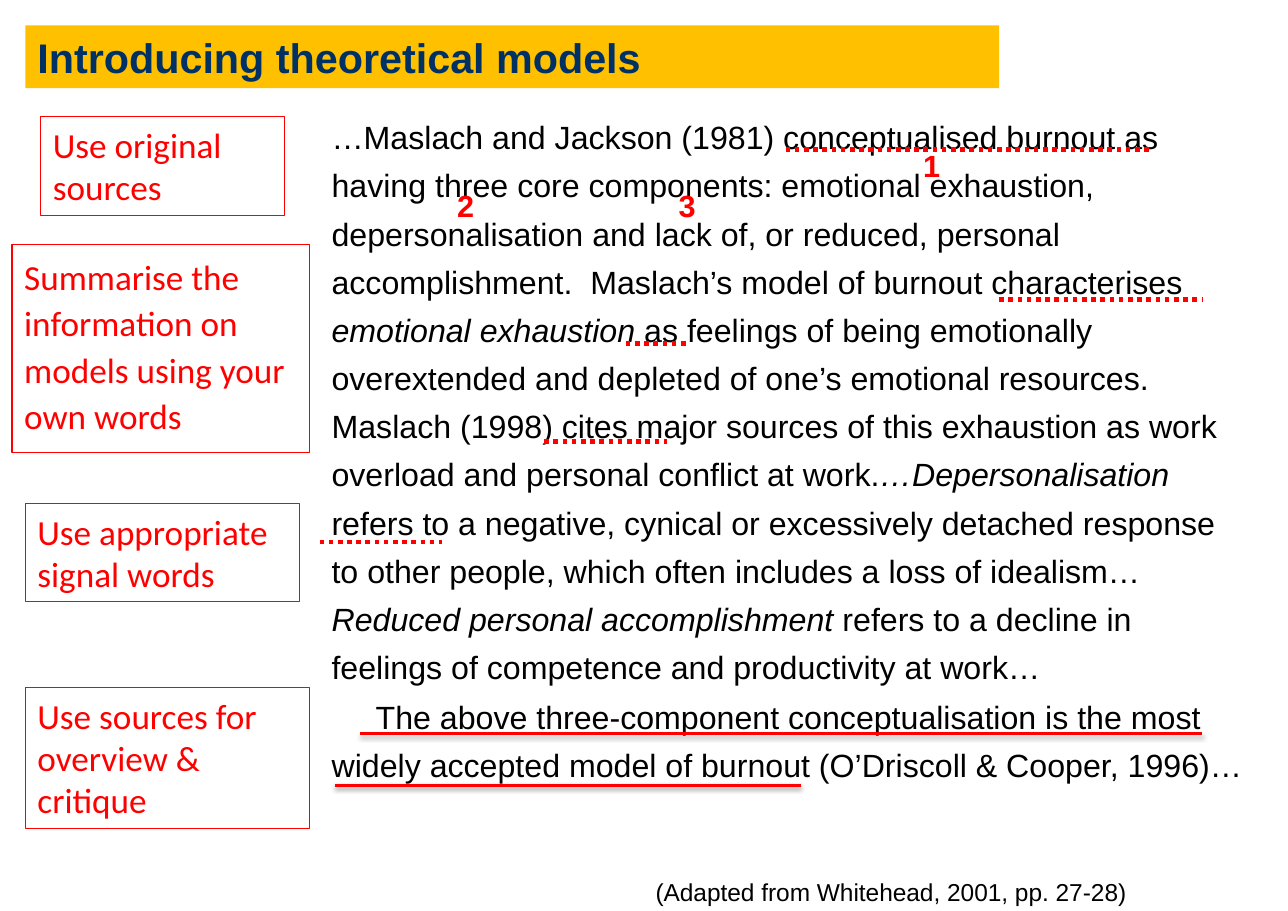
"""Build the slide on introducing theoretical models."""
import pptx
import pptx.dml.color
import pptx.enum.dml
import pptx.enum.shapes
import pptx.enum.text
import pptx.oxml
import pptx.oxml.ns
import pptx.util

SCALE = 9144
RED, BLACK, NAVY, GOLD = "FF0000", "000000", "003164", "FFC000"

BODY = [
    ("…Maslach and Jackson (1981) conceptualised burnout as having three core "
     "components: emotional exhaustion, depersonalisation and lack of, or reduced, "
     "personal accomplishment.  Maslach’s model of burnout characterises ", False),
    ("emotional exhaustion", True),
    (" as feelings of being emotionally overextended and depleted of one’s "
     "emotional resources. Maslach (1998) cites major sources of this exhaustion "
     "as work overload and personal conflict at work.", False),
    ("…Depersonalisation", True),
    (" refers to a negative, cynical or excessively detached response to other "
     "people, which often includes a loss of idealism…", False),
    ("Reduced personal accomplishment", True),
    (" refers to a decline in feelings of competence and productivity at work…", False),
]
CLOSE = ("The above three-component conceptualisation is the most widely accepted "
         "model of burnout (O’Driscoll & Cooper, 1996)…")
NOTES = [
    ("Summarise the information on models using your own words", 11, 222, 270, 189, 1.1),
    ("Use sources for overview & critique", 23, 624, 258, 128, 1),
    ("Use original sources", 37, 106, 221, 90, 1),
    ("Use appropriate signal words", 23, 457, 249, 89, 1),
]
MARKS = [("1", 827, 127), ("2", 404, 164), ("3", 605, 164)]
DOTS = [(713, 1045, 136), (907, 1091, 272), (568, 623, 312),
        (494, 605, 401), (290, 401, 492)]
RULES = [(327, 1091, 666), (304, 727, 713)]


def px(*nums):
    """Turn px lengths into EMU."""
    return [pptx.util.Emu(num * SCALE) for num in nums]


def tint(code):
    """Turn a hex string into a colour."""
    return pptx.dml.color.RGBColor.from_string(code)


def fit(shape, runs, size, color, face="Arial", bold=False, space=1):
    """Fill a shape with one paragraph of (text, italic) runs."""
    frame = shape.text_frame
    frame.word_wrap = True
    frame.auto_size = pptx.enum.text.MSO_AUTO_SIZE.SHAPE_TO_FIT_TEXT
    frame.vertical_anchor = pptx.enum.text.MSO_ANCHOR.TOP
    frame.margin_left, frame.margin_right = px(11, 11)
    frame.margin_top, frame.margin_bottom = px(6, 6)
    para = frame.paragraphs[0]
    para.alignment = pptx.enum.text.PP_ALIGN.LEFT
    para.line_spacing = space
    for text, slant in runs:
        run = para.add_run()
        run.text = text
        font = run.font
        font.name, font.size = face, pptx.util.Pt(size)
        font.bold, font.italic = bold, slant
        font.color.rgb = tint(color)
    return para


def label(slide, runs, area, size, color=BLACK, **style):
    """Add a plain text box."""
    return fit(slide.shapes.add_textbox(*px(*area)), runs, size, color, **style)


def panel(slide, area, fill=None, edge=None):
    """Add a rectangle with an optional fill and edge."""
    box = slide.shapes.add_shape(pptx.enum.shapes.MSO_SHAPE.RECTANGLE, *px(*area))
    box.shadow.inherit = False
    if fill:
        box.fill.solid()
        box.fill.fore_color.rgb = tint(fill)
    else:
        box.fill.background()
    if edge:
        box.line.color.rgb = tint(edge)
        box.line.width = pptx.util.Pt(0.75)
    else:
        box.line.fill.background()
    return box


def stroke(slide, left, right, top, width, dash=None, shade=False):
    """Add a level red line, dotted or shaded on request."""
    kind = pptx.enum.shapes.MSO_CONNECTOR.STRAIGHT
    line = slide.shapes.add_connector(kind, *px(left, top, right, top))
    line.line.color.rgb = tint(RED)
    line.line.width = pptx.util.Pt(width)
    if dash:
        line.line.dash_style = dash
    cast = ('<a:outerShdw blurRad="39370" dist="20320" dir="5400000" rotWithShape="0">'
            '<a:srgbClr val="000000"><a:alpha val="38000"/></a:srgbClr>'
            '</a:outerShdw>') if shade else ""
    space = pptx.oxml.ns.nsdecls("a")
    effect = pptx.oxml.parse_xml(f"<a:effectLst {space}>{cast}</a:effectLst>")
    line._element.spPr.append(effect)


def main():
    """Build and save the slide."""
    deck = pptx.Presentation()
    deck.slide_width, deck.slide_height = px(1169, 827)
    slide = deck.slides.add_slide(deck.slide_layouts[6])

    title = panel(slide, (23, 23, 884, 57), fill=GOLD)
    fit(title, [("Introducing theoretical models", False)], 27, NAVY, bold=True)
    label(slide, BODY, (290, 92, 847, 542), 21, space=1.25)
    close = label(slide, [(CLOSE, False)], (290, 618, 862, 100), 21, space=1.25)
    close._p.get_or_add_pPr().set("indent", str(40 * SCALE))

    for text, left, top, width, height, space in NOTES:
        note = panel(slide, (left, top, width, height), edge=RED)
        fit(note, [(text, False)], 23, RED, face="Calibri", space=space)
    for left, right, top in DOTS:
        stroke(slide, left, right, top, 3, dash=pptx.enum.dml.MSO_LINE.ROUND_DOT)
    for text, left, top in MARKS:
        label(slide, [(text, False)], (left, top, 46, 45), 20, RED, bold=True)
    label(slide, [("(Adapted from Whitehead, 2001, pp. 27-28)", False)],
          (584, 790, 497, 37), 16)
    for left, right, top in RULES:
        stroke(slide, left, right, top, 2, shade=True)

    deck.save("out.pptx")


if __name__ == "__main__":
    main()
